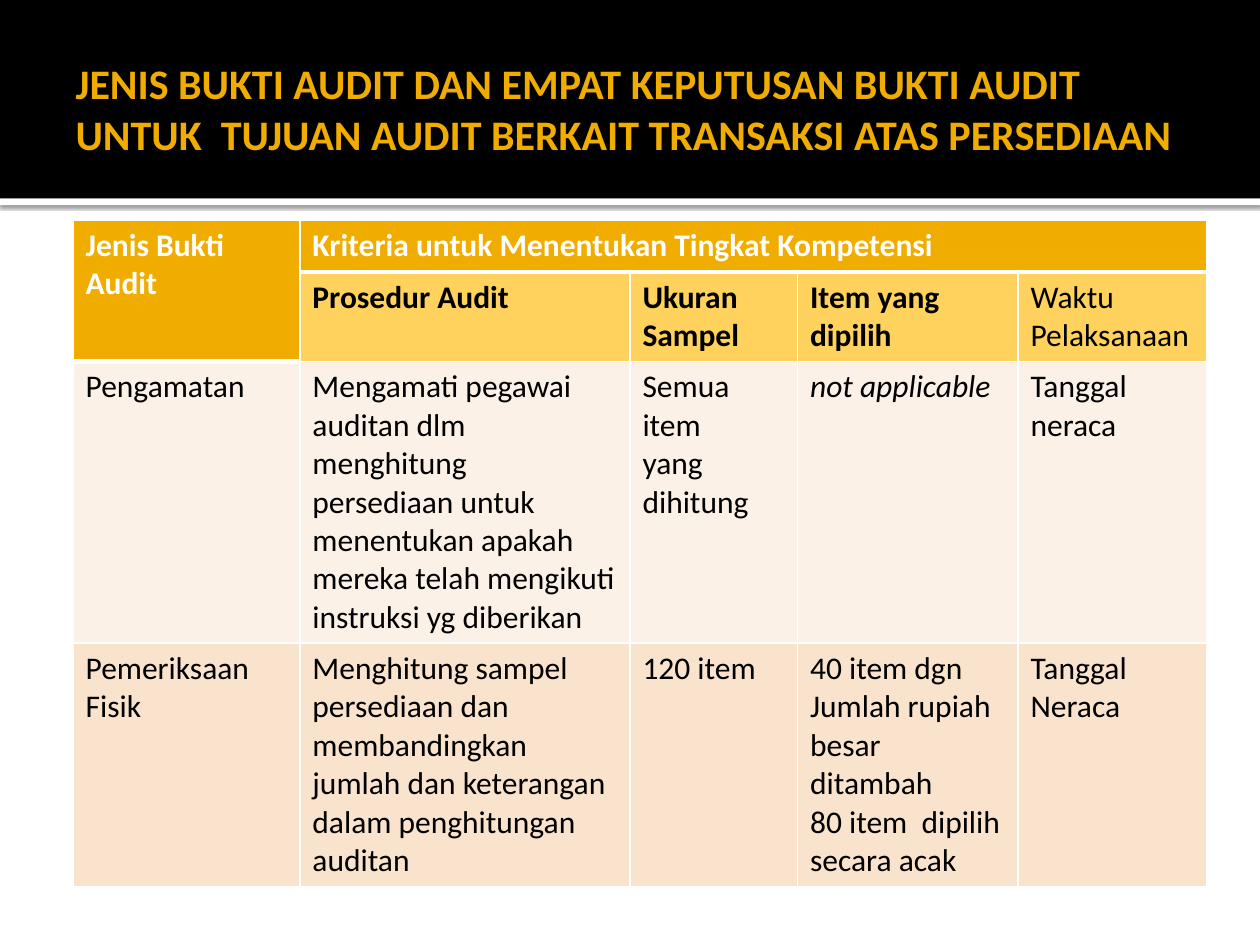
from lxml.etree import SubElement
from pptx import Presentation
from pptx.dml.color import RGBColor
from pptx.enum.shapes import MSO_SHAPE
from pptx.enum.text import MSO_ANCHOR
from pptx.oxml import parse_xml
from pptx.oxml.ns import nsdecls, qn
from pptx.util import Inches, Pt

BLACK = RGBColor(0x00, 0x00, 0x00)
WHITE = RGBColor(0xFF, 0xFF, 0xFF)
GOLD = RGBColor(0xF0, 0xAD, 0x00)
LIGHT_GOLD = RGBColor(0xFF, 0xD2, 0x5D)
CREAM = RGBColor(0xFC, 0xF1, 0xE7)
PEACH = RGBColor(0xF9, 0xE3, 0xCC)
ROW_FILLS = [GOLD, LIGHT_GOLD, CREAM, PEACH]

TITLE = ("JENIS BUKTI AUDIT DAN EMPAT KEPUTUSAN BUKTI AUDIT "
         "UNTUK  TUJUAN AUDIT BERKAIT TRANSAKSI ATAS PERSEDIAAN")
COLUMN_WIDTHS = [0.18, 0.262, 0.133, 0.175, 0.15]
ROWS = [
    ["Jenis Bukti\nAudit", "Kriteria untuk Menentukan Tingkat Kompetensi", "", "", ""],
    ["", "Prosedur Audit", "Ukuran\nSampel", "Item yang\ndipilih", "Waktu Pelaksanaan"],
    ["Pengamatan",
     "Mengamati pegawai\nauditan dlm menghitung  persediaan untuk menentukan "
     "apakah mereka telah mengikuti instruksi yg diberikan",
     "Semua\nitem\nyang\ndihitung", "not applicable", "Tanggal neraca"],
    ["Pemeriksaan Fisik",
     "Menghitung sampel\npersediaan dan\nmembandingkan\njumlah dan keterangan\n"
     "dalam penghitungan\nauditan",
     "120 item",
     "40 item dgn\nJumlah rupiah  besar ditambah\n80 item  dipilih secara acak",
     "Tanggal Neraca"],
]
MERGES = [((0, 0), (1, 0)), ((0, 1), (0, 4))]


class AuditPage:
    """Draws styled elements on one page, placed by shares of its size."""

    font_name = "Calibri"

    def __init__(self, deck):
        self.width, self.height = deck.slide_width, deck.slide_height
        self.page = deck.slides.add_slide(deck.slide_layouts[5])

    def area(self, left, top, width, height):
        return (round(left * self.width), round(top * self.height),
                round(width * self.width), round(height * self.height))

    def style(self, text_frame, size, color, bold=False, italic=False):
        for paragraph in text_frame.paragraphs:
            for span in paragraph.runs:
                font = span.font
                font.name, font.size = self.font_name, Pt(size)
                font.bold, font.italic = bold, italic
                font.color.rgb = color

    def band(self, top, height, color, shadow=False):
        box = self.page.shapes.add_shape(MSO_SHAPE.RECTANGLE, *self.area(0, top, 1, height))
        box.fill.solid()
        box.fill.fore_color.rgb = color
        box.line.fill.background()
        box.shadow.inherit = False
        if shadow:
            effects = box._element.spPr.find(qn("a:effectLst"))
            outer = SubElement(effects, qn("a:outerShdw"), blurRad=str(Pt(2.5)),
                               dist=str(Pt(0.8)), dir="5400000", algn="tl", rotWithShape="0")
            tint = SubElement(outer, qn("a:srgbClr"), val=str(BLACK))
            SubElement(tint, qn("a:alpha"), val="60000")

    def title(self, text, *place):
        box = self.page.shapes.title
        box.left, box.top, box.width, box.height = self.area(*place)
        tree = self.page.shapes._spTree
        tree.remove(box._element)
        tree.append(box._element)
        frame = box.text_frame
        frame.text = text
        frame.word_wrap = True
        frame.vertical_anchor = MSO_ANCHOR.MIDDLE
        frame.margin_left = Inches(0.1)
        frame.margin_right = frame.margin_top = frame.margin_bottom = Inches(0.05)
        frame.paragraphs[0].alignment = 1
        self.style(frame, 24, GOLD, bold=True)

    def borders(self, cell, heading):
        properties = cell._tc.get_or_add_tcPr()
        for side in "LRTB":
            weight = Pt(3) if heading and side == "B" else Pt(1)
            properties.append(parse_xml(
                f'<a:ln{side} {nsdecls("a")} w="{weight}"><a:solidFill>'
                f'<a:srgbClr val="{WHITE}"/></a:solidFill></a:ln{side}>'))

    def table(self, rows, widths, merges, *place):
        holder = self.page.shapes.add_table(len(rows), len(widths), *self.area(*place))
        grid = holder.table
        for column, share in zip(grid.columns, widths):
            column.width = round(share * self.width)
        for row in grid.rows:
            row.height = Inches(0.41)
        holder.height = round(place[3] * self.height)
        for start, end in merges:
            grid.cell(*start).merge(grid.cell(*end))
        for row_index, texts in enumerate(rows):
            for column_index, text in enumerate(texts):
                cell = grid.cell(row_index, column_index)
                heading = row_index == 0 or (row_index, column_index) == (1, 0)
                self.borders(cell, heading)
                cell.fill.solid()
                cell.fill.fore_color.rgb = GOLD if heading else ROW_FILLS[row_index]
                cell.text_frame.text = text
                self.style(cell.text_frame, 18, WHITE if heading else BLACK,
                           bold=row_index < 2 and text != "Waktu Pelaksanaan",
                           italic=text == "not applicable")


def main():
    deck = Presentation()
    deck.slide_width, deck.slide_height = Inches(10), Inches(7.5)
    audit = AuditPage(deck)
    audit.band(0.21, 0.007, WHITE, shadow=True)
    audit.band(0, 0.21, BLACK)
    audit.title(TITLE, 0.05, 0.023, 0.9, 0.183)
    audit.table(ROWS, COLUMN_WIDTHS, MERGES, 0.058, 0.233, 0.9, 0.735)
    deck.save("out.pptx")


if __name__ == "__main__":
    main()
